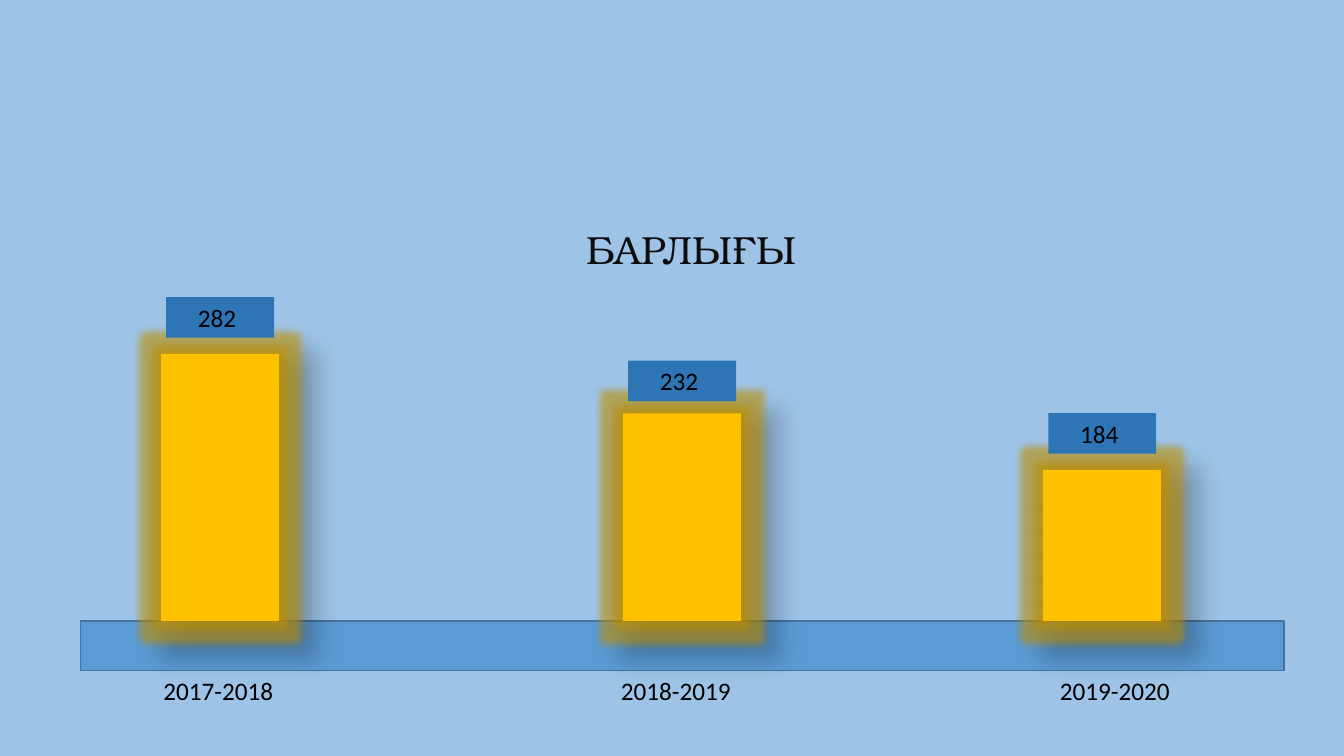
from dataclasses import dataclass

from lxml.etree import SubElement
from pptx import Presentation
from pptx.dml.color import RGBColor
from pptx.enum.shapes import MSO_SHAPE as Preset
from pptx.enum.text import MSO_ANCHOR as Anchor, PP_ALIGN as Align
from pptx.oxml.ns import qn
from pptx.util import Cm, Pt

SKY = RGBColor(0x9D, 0xC3, 0xE6)
BASE_FILL = RGBColor(0x5B, 0x9B, 0xD5)
BASE_EDGE = RGBColor(0x43, 0x73, 0x9E)
GOLD = RGBColor(0xFF, 0xC0, 0x00)
GLOW = RGBColor(0xBF, 0x90, 0x00)
LABEL_BLUE = RGBColor(0x2E, 0x75, 0xB6)
BLACK = RGBColor(0, 0, 0)
NEAR_BLACK = RGBColor(0x0D, 0x0D, 0x0D)

BASELINE = 15.65


@dataclass
class Year:
    name: str
    count: int
    bar_left: float
    bar_height: float
    label_top: float
    name_left: float
    name_indent: float


YEARS = [
    Year("2017-2018", 282, 4.06, 6.73, 7.49, 2.87, 1.25),
    Year("2018-2019", 232, 15.7, 5.23, 9.09, 14.53, 1.12),
    Year("2019-2020", 184, 26.29, 3.81, 10.41, 24.97, 1.74),
]


class Painter:
    """Draws styled elements on the current slide."""

    font = "Calibri"
    size = 18

    def __init__(self, slide):
        self.slide = slide
        slide.background.fill.solid()
        slide.background.fill.fore_color.rgb = SKY

    def box(self, left, top, width, height, fill, edge=None):
        box = self.slide.shapes.add_shape(
            Preset.RECTANGLE, Cm(left), Cm(top), Cm(width), Cm(height))
        box.shadow.inherit = False
        box.fill.solid()
        box.fill.fore_color.rgb = fill
        if edge is None:
            box.line.fill.background()
        else:
            box.line.color.rgb = edge
            box.line.width = Pt(1)
        return box

    def bar(self, left, height):
        bar = self.box(left, BASELINE - height, 2.97, height, GOLD)
        effects = bar._element.spPr.find(qn("a:effectLst"))
        self.effect(effects, "a:glow", GLOW, 60, rad=Pt(11))
        self.effect(effects, "a:outerShdw", BLACK, 30, blurRad=Pt(15),
                    dist=Pt(18), dir=45 * 60000, algn="tl", rotWithShape=0)

    def effect(self, effects, tag, color, opacity, **settings):
        effect = SubElement(effects, qn(tag))
        for key, value in settings.items():
            effect.set(key, str(value))
        tint = SubElement(effect, qn("a:srgbClr"), val=str(color))
        SubElement(tint, qn("a:alpha"), val=str(opacity * 1000))

    def label(self, left, top, text):
        label = self.box(left, top, 2.72, 1.02, LABEL_BLUE)
        self.put_text(label.text_frame, text, indent=0.8)

    def caption(self, left, top, width, height, text, **style):
        caption = self.slide.shapes.add_textbox(
            Cm(left), Cm(top), Cm(width), Cm(height))
        self.put_text(caption.text_frame, text, **style)

    def put_text(self, frame, text, indent=0.25, align=Align.LEFT,
                 font=font, size=size, color=BLACK):
        frame.word_wrap = True
        frame.vertical_anchor = Anchor.TOP
        frame.margin_left = Cm(indent)
        paragraph = frame.paragraphs[0]
        paragraph.text = text
        paragraph.alignment = align
        paragraph.font.name = font
        paragraph.font.size = Pt(size)
        paragraph.font.color.rgb = color


def main():
    deck = Presentation()
    deck.slide_width, deck.slide_height = Cm(33.87), Cm(19.05)
    painter = Painter(deck.slides.add_slide(deck.slide_layouts[6]))

    painter.box(2.03, BASELINE, 30.33, 1.24, BASE_FILL, BASE_EDGE)
    painter.caption(11.71, 5.56, 11.43, 1.45, "БАРЛЫҒЫ", align=Align.CENTER,
                    font="TeX Gyre Bonum", size=28, color=NEAR_BLACK)
    for year in YEARS:
        painter.caption(year.name_left, 16.88, 5.6, 1.02, year.name,
                        indent=year.name_indent)
        painter.bar(year.bar_left, year.bar_height)
        painter.label(year.bar_left + 0.13, year.label_top, str(year.count))

    deck.save("out.pptx")


if __name__ == "__main__":
    main()
